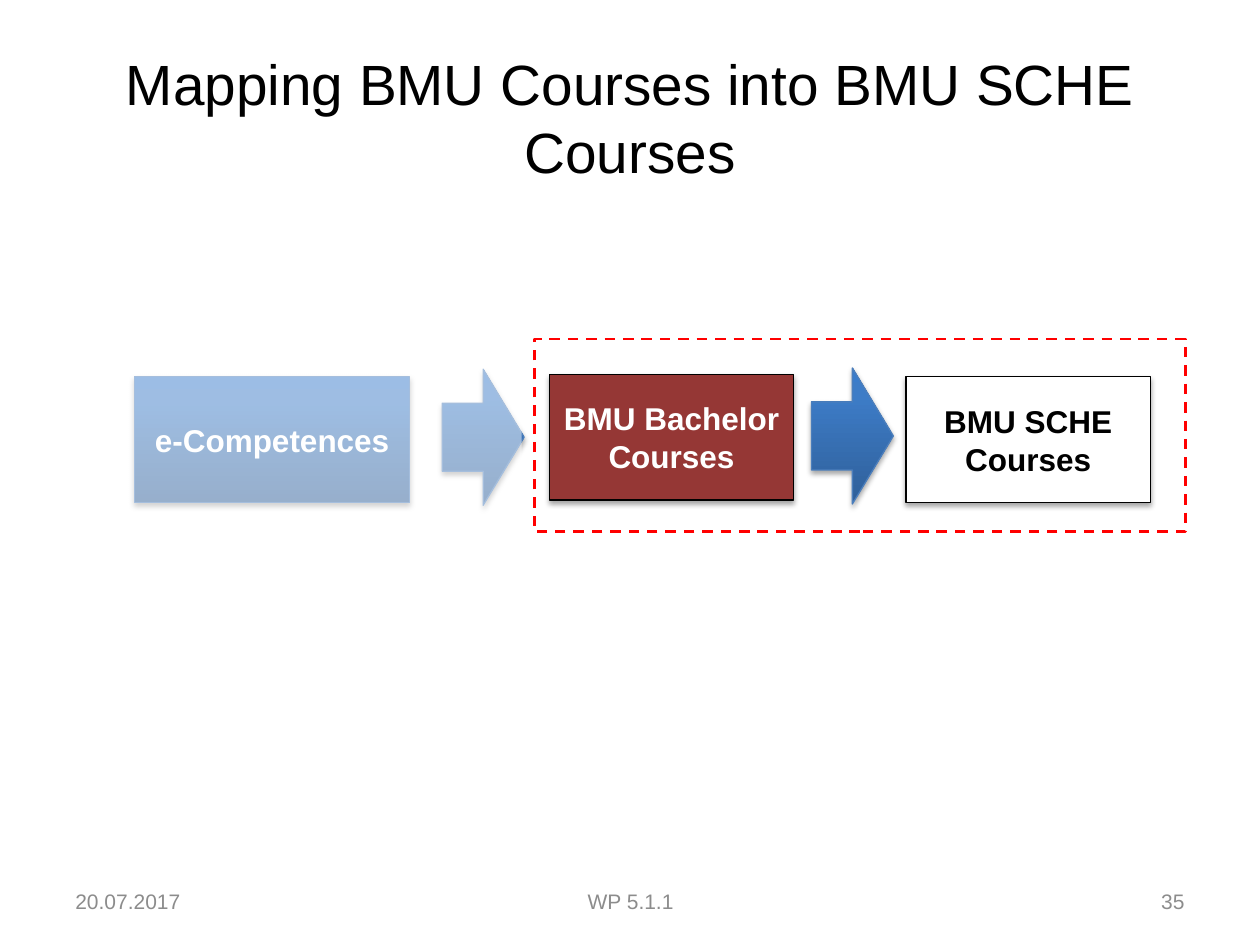
from lxml import etree
from pptx import Presentation
from pptx.dml.color import RGBColor
from pptx.enum.dml import MSO_LINE
from pptx.enum.shapes import MSO_SHAPE
from pptx.enum.text import MSO_ANCHOR, MSO_AUTO_SIZE, PP_ALIGN
from pptx.oxml import parse_xml
from pptx.oxml.ns import nsdecls, qn
from pptx.util import Inches, Pt

GRADIENT = [(0, "2F5F99"), (80, "3D7CC7"), (100, "3A7CCB")]


def rgb(value):
    return RGBColor.from_string(value)


def write(shape, text, size, color, bold=False, align=PP_ALIGN.CENTER):
    tf = shape.text_frame
    tf.word_wrap = True
    tf.auto_size = MSO_AUTO_SIZE.NONE
    tf.vertical_anchor = MSO_ANCHOR.MIDDLE
    p = tf.paragraphs[0]
    p.alignment = align
    r = p.add_run()
    r.text = text
    for name, value in {"name": "Arial", "size": Pt(size), "bold": bold}.items():
        setattr(r.font, name, value)
    r.font.color.rgb = rgb(color)


prs = Presentation()
prs.slide_width, prs.slide_height = Inches(10), Inches(7.5)
s = prs.slides.add_slide(prs.slide_layouts[5])

title = s.shapes.title
title.left, title.top = Inches(0.5), Inches(0.3)
title.width, title.height = Inches(9), Inches(1.25)
write(title, "Mapping BMU Courses into BMU SCHE Courses", 32.4, "000000")

# Process steps and arrows; a fill of None means the blue gradient
RECT, ARROW = MSO_SHAPE.RECTANGLE, MSO_SHAPE.RIGHT_ARROW
steps = [
    (RECT, 1.07, 2.99, 2.18, 1, None, "4B7EBC", "e-Competences", "FFFFFF"),
    (RECT, 4.36, 2.97, 1.94, 1, "953735", "000000", "BMU Bachelor Courses", "FFFFFF"),
    (ARROW, 3.51, 2.93, 0.65, 1.08, None, "4B7EBC", None, None),
    (ARROW, 6.44, 2.92, 0.65, 1.08, None, "4B7EBC", None, None),
    (RECT, 7.19, 2.99, 1.94, 1, "FFFFFF", "000000", "BMU SCHE Courses", "000000"),
]
for kind, x, y, w, h, fill, line, text, color in steps:
    sp = s.shapes.add_shape(kind, Inches(x), Inches(y), Inches(w), Inches(h))
    spPr = sp._element.spPr
    if fill:
        sp.fill.solid()
        sp.fill.fore_color.rgb = rgb(fill)
    else:
        sp.fill.gradient()
        stops = "".join(f'<a:gs pos="{pos * 1000}"><a:srgbClr val="{c}"/></a:gs>'
                        for pos, c in GRADIENT)
        spPr.replace(spPr.find(qn("a:gradFill")), parse_xml(
            f'<a:gradFill {nsdecls("a")} rotWithShape="1"><a:gsLst>{stops}</a:gsLst>'
            '<a:lin ang="16200000" scaled="0"/></a:gradFill>'))
    sp.line.color.rgb = rgb(line)
    sp.line.width = Pt(0.75)
    sp.shadow.inherit = False
    spPr.find(qn("a:effectLst")).append(parse_xml(
        f'<a:outerShdw {nsdecls("a")} blurRad="40000" dist="23000" dir="5400000" '
        'rotWithShape="0"><a:srgbClr val="000000"><a:alpha val="35000"/></a:srgbClr>'
        '</a:outerShdw>'))
    if text:
        write(sp, text, 18, color, bold=True)

frame = s.shapes.add_shape(RECT, Inches(4.24), Inches(2.69), Inches(5.17), Inches(1.53))
frame.fill.background()
frame.line.color.rgb = rgb("FF0000")
frame.line.width = Pt(1.5)
frame.line.dash_style = MSO_LINE.DASH
frame.shadow.inherit = False

# Half-transparent veil that dims the first step
veil = s.shapes.add_shape(RECT, Inches(0.77), Inches(2.75), Inches(3.37), Inches(1.58))
veil.fill.solid()
veil.fill.fore_color.rgb = rgb("FFFFFF")
veil_color = veil._element.spPr.find(qn("a:solidFill"))[0]
etree.SubElement(veil_color, qn("a:alpha"), val="50000")
veil.line.fill.background()
veil.shadow.inherit = False

footers = [
    (0.5, 2.33, "20.07.2017", PP_ALIGN.LEFT),
    (3.42, 3.17, "WP 5.1.1", PP_ALIGN.CENTER),
    (7.17, 2.33, "35", PP_ALIGN.RIGHT),
]
for x, w, text, align in footers:
    box = s.shapes.add_textbox(Inches(x), Inches(6.95), Inches(w), Inches(0.4))
    write(box, text, 12, "8C8C8C", align=align)

prs.save("out.pptx")
